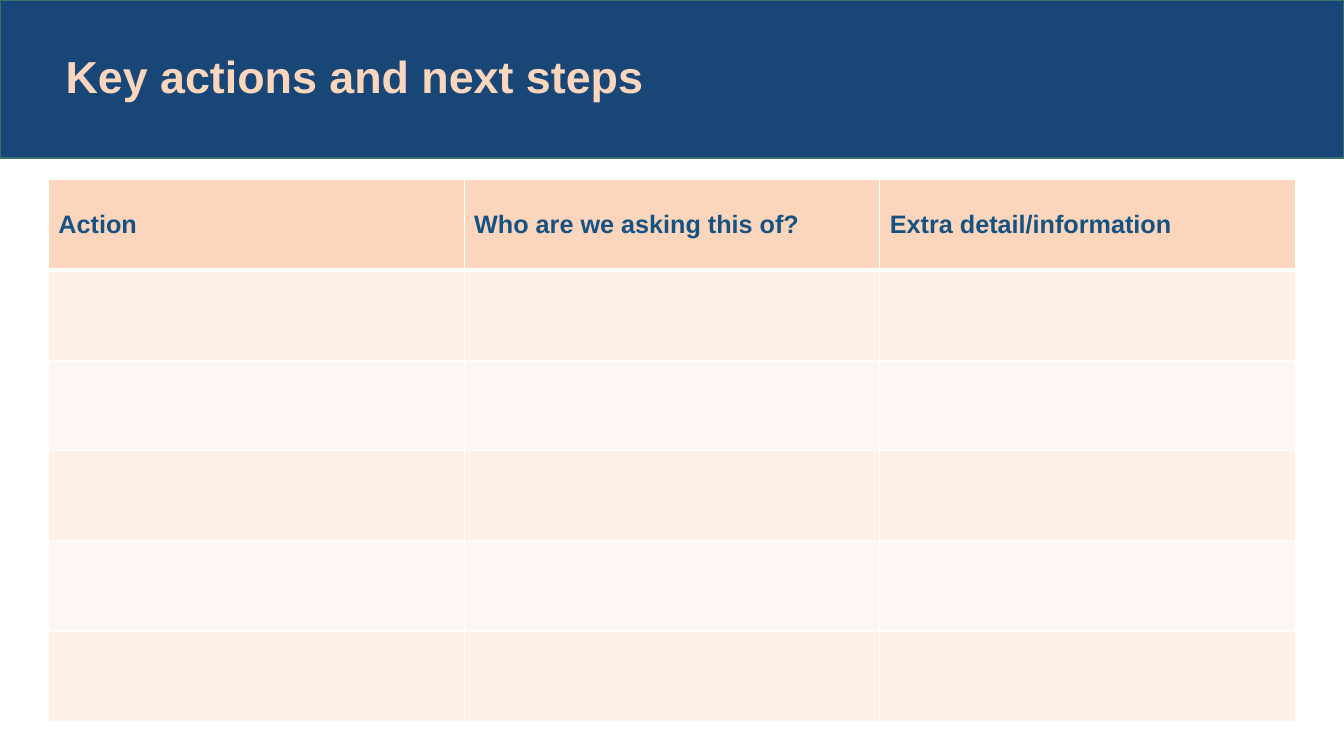
from dataclasses import dataclass

from lxml.etree import SubElement
from pptx import Presentation
from pptx.dml.color import RGBColor as Color
from pptx.enum.shapes import MSO_SHAPE as Shape
from pptx.enum.text import MSO_ANCHOR as Anchor, MSO_AUTO_SIZE as AutoSize, PP_ALIGN as Align
from pptx.oxml.ns import qn
from pptx.util import Inches, Pt


@dataclass(frozen=True)
class Theme:
    """Colours, font and type sizes of the slide."""
    font: str = "Arial"
    navy: str = "174677"
    band_line: str = "37716B"
    peach: str = "FBD6BC"
    header_text: str = "155181"
    odd_row: str = "FDF0E7"
    even_row: str = "FEF7F3"
    rule: str = "FFFFFF"
    title_size: int = 32
    header_size: int = 18


THEME = Theme()
HEADERS = ("Action", "Who are we asking this of?", "Extra detail/information")
EMPTY_ROWS = 5
BAND_HEIGHT = Inches(1.57)


def apply_format(target, values):
    """Set each attribute named in values on the target."""
    for name, value in values.items():
        setattr(target, name, value)


def write_text(frame, text, size, color):
    """Write one bold, left-aligned paragraph."""
    para = frame.paragraphs[0]
    para.alignment = Align.LEFT
    span = para.add_run()
    span.text = text
    apply_format(span.font, {"name": THEME.font, "size": Pt(size), "bold": True})
    span.font.color.rgb = Color.from_string(color)
    return para


def add_title(page, text):
    """Place the title over a full-width band."""
    title = page.shapes.title
    apply_format(title, {"left": Inches(0.55), "top": 0,
                         "width": Inches(10.16), "height": BAND_HEIGHT})
    apply_format(title.text_frame, {"vertical_anchor": Anchor.MIDDLE, "word_wrap": True,
                                    "auto_size": AutoSize.NONE})
    para = write_text(title.text_frame, text, THEME.title_size, THEME.peach)
    para.line_spacing = 0.9

    band = page.shapes.add_shape(Shape.RECTANGLE, 0, 0, Inches(13.33), BAND_HEIGHT)
    band.shadow.inherit = False
    band.fill.solid()
    band.fill.fore_color.rgb = Color.from_string(THEME.navy)
    band.line.color.rgb = Color.from_string(THEME.band_line)
    band.line.width = Pt(1)
    title.element.addprevious(band.element)


def add_borders(cell, widths):
    """Draw the cell's four borders in the rule colour."""
    properties = cell._tc.get_or_add_tcPr()
    for side, width in widths.items():
        line = SubElement(properties, qn(f"a:ln{side}"), w=str(Pt(width)))
        fill = SubElement(line, qn("a:solidFill"))
        SubElement(fill, qn("a:srgbClr"), val=THEME.rule)


def add_action_table(page):
    """Add the header row and the banded empty rows."""
    rows, columns = EMPTY_ROWS + 1, len(HEADERS)
    table = page.shapes.add_table(rows, columns, Inches(0.48), Inches(1.78),
                                  Inches(12.37), Inches(5.38)).table
    for row in range(rows):
        for column in range(columns):
            cell = table.cell(row, column)
            add_borders(cell, {"L": 1, "R": 1, "T": 3 if row == 1 else 1,
                               "B": 3 if row == 0 else 1})
            band = THEME.odd_row if row % 2 else THEME.even_row
            cell.fill.solid()
            cell.fill.fore_color.rgb = Color.from_string(band if row else THEME.peach)
    for column, text in enumerate(HEADERS):
        cell = table.cell(0, column)
        cell.vertical_anchor = Anchor.MIDDLE
        write_text(cell.text_frame, text, THEME.header_size, THEME.header_text)


def main():
    """Build and save the slide."""
    deck = Presentation()
    apply_format(deck, {"slide_width": Inches(13.33), "slide_height": Inches(7.5)})
    page = deck.slides.add_slide(deck.slide_layouts[5])
    add_title(page, "Key actions and next steps")
    add_action_table(page)
    deck.save("out.pptx")


if __name__ == "__main__":
    main()
